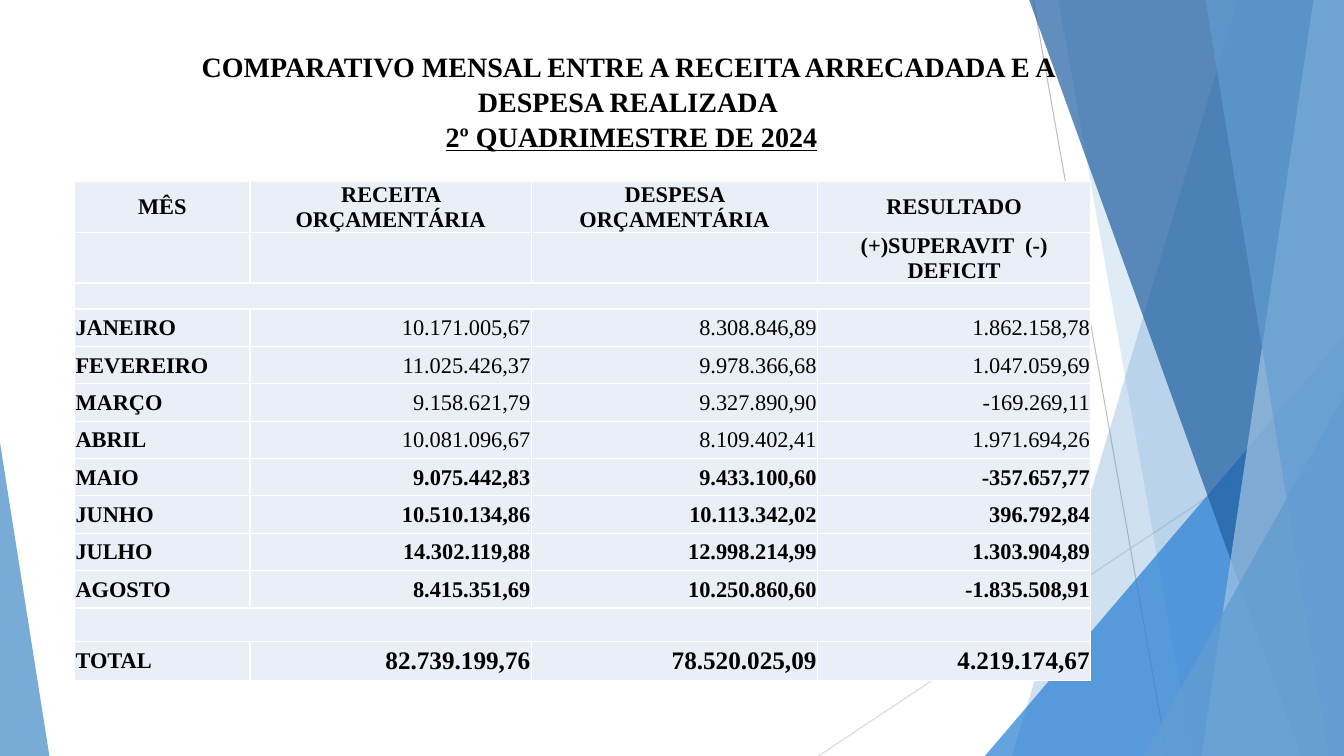
"""Builds the monthly revenue and expense comparison slide."""
from dataclasses import dataclass

from lxml import etree
from pptx import Presentation
from pptx.dml.color import RGBColor
from pptx.enum.shapes import MSO_CONNECTOR, MSO_SHAPE
from pptx.enum.text import MSO_ANCHOR, MSO_AUTO_SIZE, PP_ALIGN
from pptx.oxml.ns import qn
from pptx.util import Inches, Pt

STRAIGHT = MSO_CONNECTOR.STRAIGHT
TRIANGLE = MSO_SHAPE.ISOSCELES_TRIANGLE
TOP, MIDDLE = MSO_ANCHOR.TOP, MSO_ANCHOR.MIDDLE
LEFT, CENTER, RIGHT = PP_ALIGN.LEFT, PP_ALIGN.CENTER, PP_ALIGN.RIGHT
NO_FIT = MSO_AUTO_SIZE.NONE

WIDTH, HEIGHT = Inches(13.333), Inches(7.5)
FONT = "Times New Roman"
COLOURS = {
    "text": "000000", "cell": "EAEFF7", "border": "FFFFFF",
    "steep_line": "BFBFBF", "flat_line": "D9D9D9",
    "sky": "629DD1", "bright": "297FD5", "deep": "1F5FA0", "pale": "A1C4E3",
}


@dataclass
class Stroke:
    """A thin line, with ends in percent of the slide."""
    start: tuple[float, float]
    end: tuple[float, float]
    colour: str


@dataclass
class Shard:
    """A full-height band at the right edge, with its left side in percent."""
    top_left: float
    bottom_left: float
    top_right: float
    colour: str
    opacity: int


@dataclass
class Peak:
    """A triangle on the slide's bottom edge, in percent of the slide."""
    left: float
    top: float
    width: float
    apex: float
    colour: str
    opacity: int


@dataclass
class Row:
    """A table row, with its height in percent of the slide."""
    height: float
    texts: tuple[str, ...] = ()
    header: bool = False
    bold: bool = True
    size: int = 16


DECORATION = [
    Stroke((76.88, 0), (86.85, 100), "steep_line"),
    Stroke((100, 53.73), (60.9, 100), "flat_line"),
    Shard(92.1, 75.3, 100, "sky", 30),
    Shard(78.75, 88.73, 100, "sky", 20),
    Peak(73.28, 44.4, 26.72, 1, "bright", 72),
    Shard(76.58, 96.83, 100, "deep", 70),
    Shard(97.73, 89.4, 100, "pale", 70),
    Shard(89.7, 98.85, 100, "sky", 65),
    Peak(85.05, 52.4, 14.95, 1, "sky", 80),
    Peak(0, 58.53, 3.68, 0, "sky", 85),
]
COLUMNS = [13.05, 20.93, 21.3, 20.33]
MONTH = 4.95
ROWS = [
    Row(6.67, ("MÊS", "RECEITA ORÇAMENTÁRIA", "DESPESA ORÇAMENTÁRIA", "RESULTADO"), header=True),
    Row(6.67, ("", "", "", "(+)SUPERAVIT  (-) DEFICIT"), header=True),
    Row(3.4),
    Row(MONTH, ("JANEIRO", "10.171.005,67", "8.308.846,89", "1.862.158,78"), bold=False),
    Row(MONTH, ("FEVEREIRO", "11.025.426,37", "9.978.366,68", "1.047.059,69"), bold=False),
    Row(MONTH, ("MARÇO", "9.158.621,79", "9.327.890,90", "-169.269,11"), bold=False),
    Row(MONTH, ("ABRIL", "10.081.096,67", "8.109.402,41", "1.971.694,26"), bold=False),
    Row(MONTH, ("MAIO", "9.075.442,83", "9.433.100,60", "-357.657,77")),
    Row(MONTH, ("JUNHO", "10.510.134,86", "10.113.342,02", "396.792,84")),
    Row(MONTH, ("JULHO", "14.302.119,88", "12.998.214,99", "1.303.904,89")),
    Row(MONTH, ("AGOSTO", "8.415.351,69", "10.250.860,60", "-1.835.508,91")),
    Row(4.4),
    Row(5.2, ("TOTAL", "82.739.199,76", "78.520.025,09", "4.219.174,67"), size=18),
]


def across(percent: float) -> int:
    return round(WIDTH * percent / 100)


def down(percent: float) -> int:
    return round(HEIGHT * percent / 100)


def apply(target, values: dict) -> None:
    for name, value in values.items():
        setattr(target, name, value)


def rgb(name: str) -> RGBColor:
    return RGBColor.from_string(COLOURS[name])


def add_span(para, text: str, size: int, bold: bool = True, underline: bool = False) -> None:
    span = para.add_run()
    span.text = text
    values = {"name": FONT, "size": Pt(size), "bold": bold}
    apply(span.font, values | ({"underline": True} if underline else {}))
    span.font.color.rgb = rgb("text")


def draw_stroke(page, stroke: Stroke) -> None:
    (left, top), (right, bottom) = stroke.start, stroke.end
    line = page.shapes.add_connector(STRAIGHT, across(left), down(top), across(right), down(bottom))
    line.line.color.rgb = rgb(stroke.colour)
    line.line.width = Pt(0.75)
    etree.SubElement(line.element.spPr, qn("a:effectLst"))


def draw_glass(page, piece: Shard | Peak) -> None:
    if isinstance(piece, Shard):
        builder = page.shapes.build_freeform(across(piece.top_left), 0)
        corners = [(piece.top_right, 0), (100, 100), (piece.bottom_left, 100)]
        if piece.top_right < 100:
            corners.insert(1, (100, 0))
        builder.add_line_segments([(across(x), down(y)) for x, y in corners], close=True)
        shape = builder.convert_to_shape()
    else:
        shape = page.shapes.add_shape(TRIANGLE, across(piece.left), down(piece.top),
                                      across(piece.width), down(100 - piece.top))
        shape.adjustments[0] = piece.apex
    shape.shadow.inherit = False
    shape.line.fill.background()
    shape.fill.solid()
    shape.fill.fore_color.rgb = rgb(piece.colour)
    colour = shape.element.spPr.find(qn("a:solidFill"))[0]
    etree.SubElement(colour, qn("a:alpha"), val=str(piece.opacity * 1000))


def format_title(page) -> None:
    title = page.shapes.title
    apply(title, {"left": across(10.8), "top": down(5.73),
                  "width": across(71.85), "height": down(22.53)})
    apply(title.text_frame, {"vertical_anchor": TOP, "word_wrap": True, "auto_size": NO_FIT})
    para = title.text_frame.paragraphs[0]
    apply(para, {"alignment": CENTER, "line_spacing": 1.04})
    add_span(para, "COMPARATIVO MENSAL ENTRE A RECEITA ARRECADADA E A DESPESA REALIZADA", 20)
    para.add_line_break()
    add_span(para, " ", 20)
    add_span(para, "2º QUADRIMESTRE DE 2024", 20, underline=True)
    page.shapes.element.append(title.element)


def format_cell(cell, row: Row, column: int) -> None:
    inset = Inches(0.01)
    apply(cell, {"vertical_anchor": MIDDLE, "margin_left": inset, "margin_right": inset,
                 "margin_top": inset, "margin_bottom": 0})
    cell.fill.solid()
    cell.fill.fore_color.rgb = rgb("cell")
    properties = cell.fill._xPr
    for position, side in enumerate(("lnL", "lnR", "lnT", "lnB")):
        border = etree.Element(qn(f"a:{side}"), w=str(Pt(1)))
        fill = etree.SubElement(border, qn("a:solidFill"))
        etree.SubElement(fill, qn("a:srgbClr"), val=COLOURS["border"])
        properties.insert(position, border)
    para = cell.text_frame.paragraphs[0]
    text = row.texts[column] if row.texts else ""
    if text:
        para.alignment = CENTER if row.header else RIGHT if column else LEFT
        add_span(para, text, row.size if column else 16, row.bold or column == 0)
    else:
        ending = etree.SubElement(para._p, qn("a:endParaRPr"), sz="1600")
        etree.SubElement(ending, qn("a:latin"), typeface=FONT)


def draw_table(page) -> None:
    frame = page.shapes.add_table(len(ROWS), len(COLUMNS), across(5.55), down(24),
                                  across(sum(COLUMNS)), down(sum(row.height for row in ROWS)))
    table = frame.table
    apply(table, {"first_row": False, "horz_banding": False})
    for column, width in zip(table.columns, COLUMNS):
        column.width = across(width)
    for index, row in enumerate(ROWS):
        table.rows[index].height = down(row.height)
        for column in range(len(COLUMNS)):
            format_cell(table.cell(index, column), row, column)
        if not row.texts:
            table.cell(index, 0).merge(table.cell(index, len(COLUMNS) - 1))


def main() -> None:
    deck = Presentation()
    apply(deck, {"slide_width": WIDTH, "slide_height": HEIGHT})
    page = deck.slides.add_slide(deck.slide_layouts[5])
    for piece in DECORATION:
        if isinstance(piece, Stroke):
            draw_stroke(page, piece)
        else:
            draw_glass(page, piece)
    format_title(page)
    draw_table(page)
    deck.save("out.pptx")


if __name__ == "__main__":
    main()
